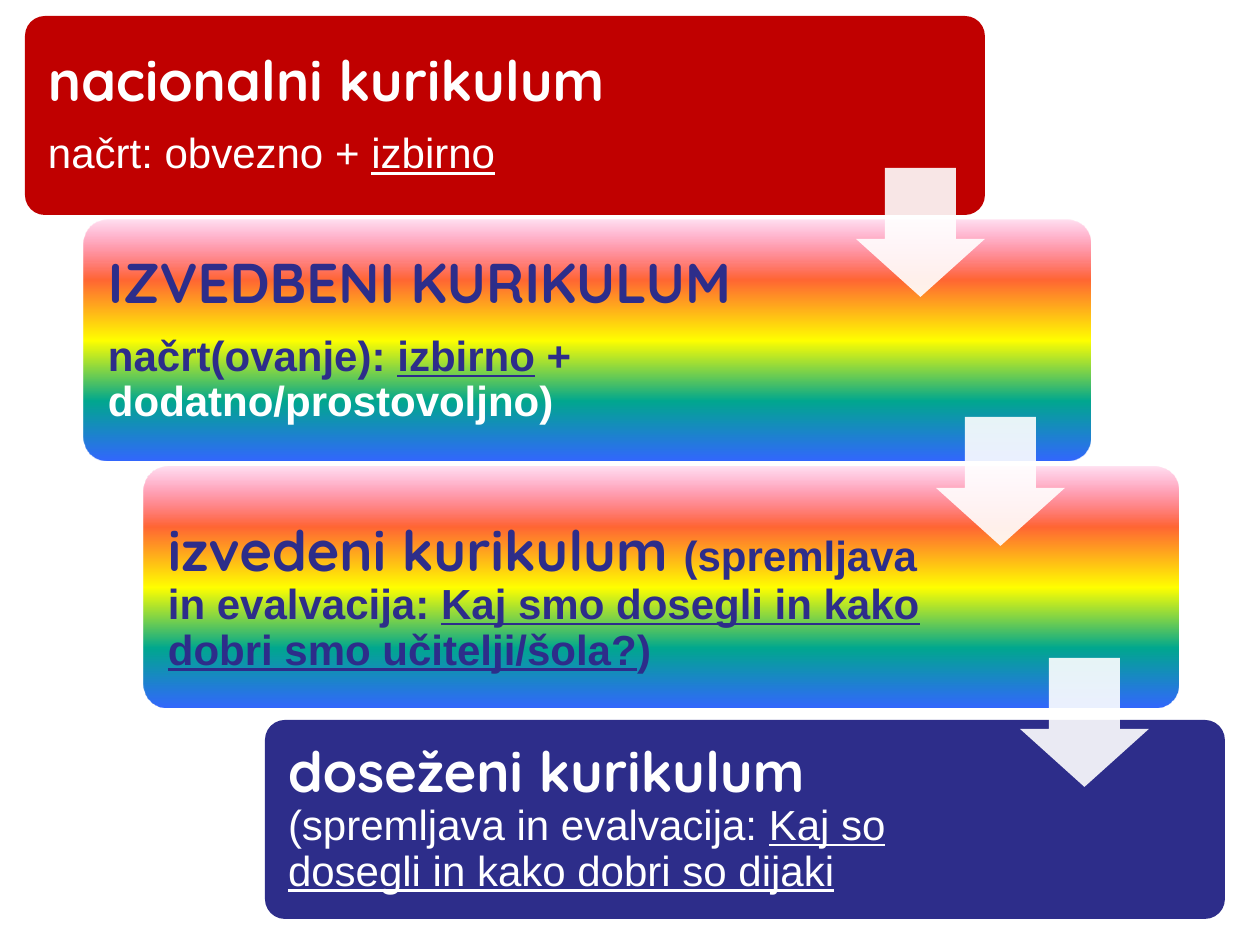
from dataclasses import dataclass
from typing import Optional

from lxml import etree
from pptx import Presentation
from pptx.dml.color import RGBColor
from pptx.enum.shapes import MSO_SHAPE
from pptx.enum.text import MSO_ANCHOR
from pptx.oxml.ns import qn
from pptx.util import Emu, Pt

ROUND_RECT = MSO_SHAPE.ROUNDED_RECTANGLE
DOWN_ARROW = MSO_SHAPE.DOWN_ARROW
MIDDLE = MSO_ANCHOR.MIDDLE

WHITE = RGBColor(0xFF, 0xFF, 0xFF)
RED = RGBColor(0xC0, 0x00, 0x00)
NAVY = RGBColor(0x2D, 0x2D, 0x8A)
PINK = RGBColor(0xFF, 0x33, 0x99)
ORANGE = RGBColor(0xFF, 0x66, 0x33)
YELLOW = RGBColor(0xFF, 0xFF, 0x00)
TEAL = RGBColor(0x01, 0xA7, 0x8F)
BLUE = RGBColor(0x33, 0x66, 0xFF)
RAINBOW = [(0, PINK, 15), (25, ORANGE, 100), (50, YELLOW, 100),
           (75, TEAL, 100), (100, BLUE, 100)]

EMU_PER_PX = 914400 / 126
CORNER = 0.1
CORNER_INSET = CORNER * 0.293
TEXT_MARGIN = 17
ARROW_SIZE = 129


@dataclass
class Run:
    text: str
    color: RGBColor
    name: str = "Arial"
    size: int = 24
    bold: bool = False
    underline: bool = False


@dataclass
class Step:
    x: int
    y: int
    w: int
    h: int
    text_w: int
    paragraphs: list[list[Run]]
    fill: Optional[RGBColor] = None
    gap: int = 0
    text_shift: int = 0


def px(n: float) -> Emu:
    return Emu(round(n * EMU_PER_PX))


def title(text: str, color: RGBColor) -> Run:
    return Run(text, color, "Quicksand", 32, True)


def add_color(parent, color: RGBColor, alpha: int) -> None:
    clr = etree.SubElement(parent, qn("a:srgbClr"), val=str(color))
    if alpha < 100:
        etree.SubElement(clr, qn("a:alpha"), val=str(alpha * 1000))


def fill_rainbow(sp) -> None:
    sp.fill.gradient()
    grad = sp._element.spPr.find(qn("a:gradFill"))
    for child in list(grad):
        grad.remove(child)
    stops = etree.SubElement(grad, qn("a:gsLst"))
    for pos, color, alpha in RAINBOW:
        stop = etree.SubElement(stops, qn("a:gs"), pos=str(pos * 1000))
        add_color(stop, color, alpha)
    etree.SubElement(grad, qn("a:lin"), ang="5400000", scaled="0")


def add_card(s, step: Step) -> None:
    sp = s.shapes.add_shape(ROUND_RECT, px(step.x), px(step.y),
                            px(step.w), px(step.h))
    sp.shadow.inherit = False
    sp.adjustments[0] = CORNER
    sp.line.fill.background()
    if step.fill is None:
        fill_rainbow(sp)
    else:
        sp.fill.solid()
        sp.fill.fore_color.rgb = step.fill


def add_text(s, step: Step) -> None:
    inset = round(step.h * CORNER_INSET)
    sp = s.shapes.add_textbox(px(step.x + inset),
                              px(step.y + inset + step.text_shift),
                              px(step.text_w), px(step.h - 2 * inset))
    tf = sp.text_frame
    frame = {"word_wrap": True, "vertical_anchor": MIDDLE}
    for side in ("left", "top", "right", "bottom"):
        frame[f"margin_{side}"] = px(TEXT_MARGIN)
    for key, value in frame.items():
        setattr(tf, key, value)
    for i, runs in enumerate(step.paragraphs):
        p = tf.add_paragraph() if i else tf.paragraphs[0]
        p.line_spacing = 0.9
        p.space_after = Pt(0 if i else step.gap)
        for run in runs:
            r = p.add_run()
            r.text = run.text
            font = {"name": run.name, "size": Pt(run.size),
                    "bold": run.bold, "underline": run.underline}
            for key, value in font.items():
                setattr(r.font, key, value)
            r.font.color.rgb = run.color


def add_arrow(s, x: int, y: int) -> None:
    sp = s.shapes.add_shape(DOWN_ARROW, px(x), px(y),
                            px(ARROW_SIZE), px(ARROW_SIZE))
    sp.shadow.inherit = False
    sp.adjustments[0] = 0.55
    sp.adjustments[1] = 0.45
    sp.line.fill.background()
    sp.fill.solid()
    sp.fill.fore_color.rgb = WHITE
    clr = sp._element.spPr.find(qn("a:solidFill")).find(qn("a:srgbClr"))
    etree.SubElement(clr, qn("a:alpha"), val="90000")


STEPS = [
    Step(25, 16, 960, 199, 730, [
        [title("nacionalni kurikulum", WHITE)],
        [Run("načrt: obvezno + ", WHITE),
         Run("izbirno", WHITE, underline=True)],
    ], fill=RED, gap=11),
    Step(84, 220, 1006, 241, 772, [
        [title("IZVEDBENI KURIKULUM", NAVY)],
        [Run("načrt(ovanje): ", NAVY, bold=True),
         Run("izbirno", NAVY, bold=True, underline=True),
         Run(" + ", NAVY, bold=True),
         Run("dodatno/prostovoljno)", WHITE, bold=True)],
    ], gap=11),
    Step(144, 467, 1034, 241, 795, [
        [title("izvedeni kurikulum ", NAVY),
         Run("(spremljava in evalvacija: ", NAVY, bold=True),
         Run("Kaj smo dosegli in kako dobri smo učitelji/šola?", NAVY,
             bold=True, underline=True),
         Run(")", NAVY, bold=True)],
    ], text_shift=11),
    Step(265, 720, 960, 199, 740, [
        [title("doseženi kurikulum", WHITE)],
        [Run("(spremljava in evalvacija: ", WHITE),
         Run("Kaj so dosegli in kako dobri so dijaki", WHITE,
             underline=True)],
    ], fill=NAVY),
]
ARROWS = [(856, 168), (936, 417), (1020, 658)]


def main() -> None:
    prs = Presentation()
    prs.slide_width, prs.slide_height = px(1260), px(945)
    s = prs.slides.add_slide(prs.slide_layouts[6])
    for step in STEPS:
        add_card(s, step)
        add_text(s, step)
    for x, y in ARROWS:
        add_arrow(s, x, y)
    prs.save("out.pptx")


if __name__ == "__main__":
    main()
